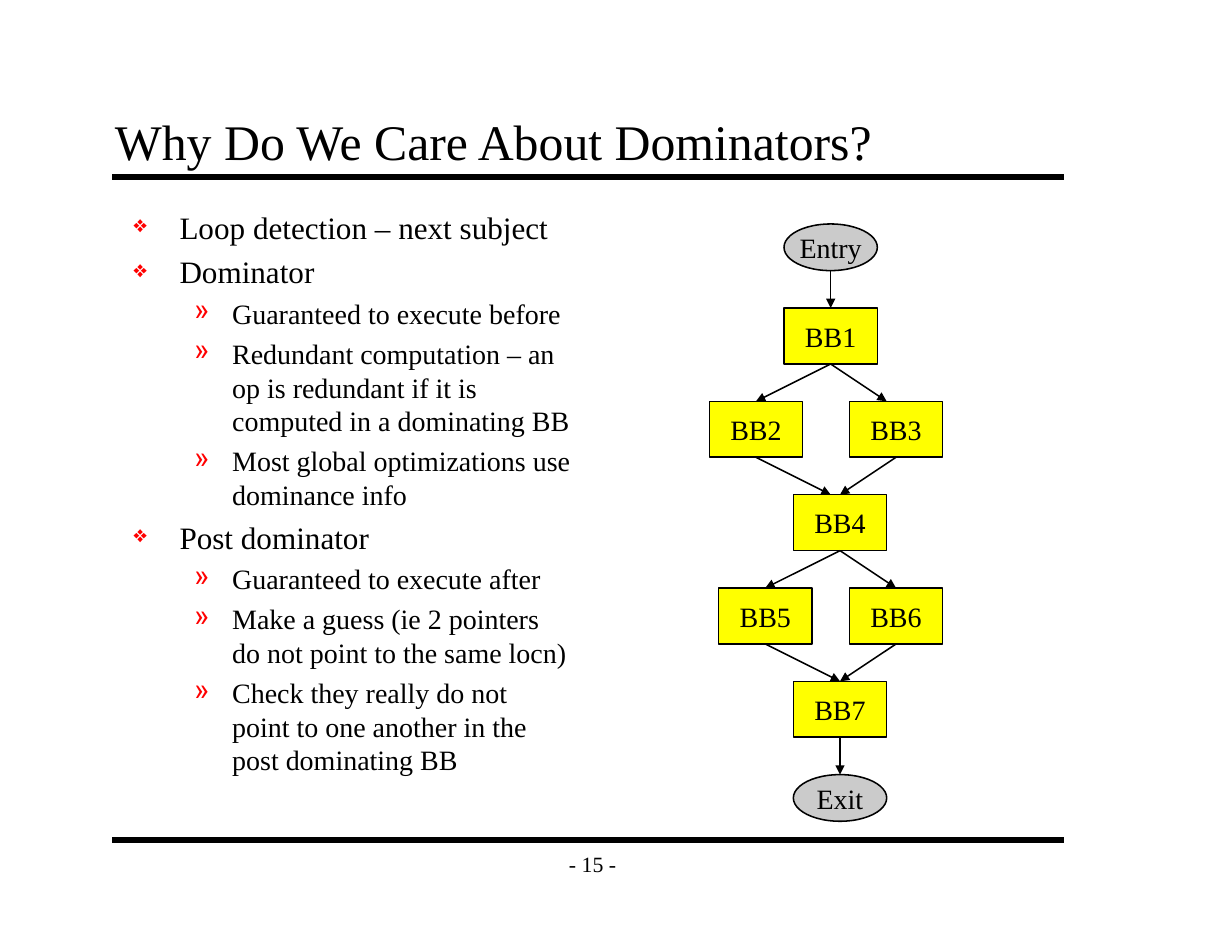
import pptx
import pptx.util
import pptx.dml.color
import pptx.enum.shapes
import pptx.enum.text
import pptx.oxml.ns
from lxml import etree

COLORS = {"ink": "000000", "block": "FFFF00", "terminal": "CBCBCB", "bullet": "FF0000"}
ANCHOR = pptx.enum.text.MSO_ANCHOR
ALIGN = pptx.enum.text.PP_ALIGN
SHAPE = pptx.enum.shapes.MSO_SHAPE
COLUMNS, ROWS = 132, 102

POINTS = [
    (0, "Loop detection – next subject"),
    (0, "Dominator"),
    (1, "Guaranteed to execute before"),
    (1, "Redundant computation – an op is redundant if it is computed in a dominating BB"),
    (1, "Most global optimizations use dominance info"),
    (0, "Post dominator"),
    (1, "Guaranteed to execute after"),
    (1, "Make a guess (ie 2 pointers do not point to the same locn)"),
    (1, "Check they really do not point to one another in the post dominating BB"),
]
LEVELS = [
    {"size": 20, "left": 0.41, "hang": 0.41, "mark": "❖", "scale": 75},
    {"size": 18, "left": 0.88, "hang": 0.34, "mark": "»", "scale": 100},
]
NODES = {
    "Entry": (84, 24), "BB1": (84, 33), "BB2": (76, 43), "BB3": (91, 43),
    "BB4": (85, 53), "BB5": (77, 63), "BB6": (91, 63), "BB7": (85, 73), "Exit": (85, 83),
}
EDGES = [
    ("Entry", "BB1", 0), ("BB1", "BB2", 0), ("BB1", "BB3", -1),
    ("BB2", "BB4", -1), ("BB3", "BB4", 0), ("BB4", "BB5", 0), ("BB4", "BB6", 0),
    ("BB5", "BB7", 0), ("BB6", "BB7", 0), ("BB7", "Exit", 0),
]
NODE_WIDTH, BLOCK_HEIGHT, TERMINAL_HEIGHT = 10, 6, 5


class SlideBuilder:
    font = "Times New Roman"

    def __init__(self, deck):
        self.page = deck.slides.add_slide(deck.slide_layouts[6])
        self.column = deck.slide_width / COLUMNS
        self.row = deck.slide_height / ROWS

    def place(self, x, y):
        return round(x * self.column), round(y * self.row)

    def color(self, name):
        return pptx.dml.color.RGBColor.from_string(COLORS[name])

    def format_runs(self, para, size):
        for span in para.runs:
            span.font.name = self.font
            span.font.size = pptx.util.Pt(size)
            span.font.color.rgb = self.color("ink")

    def text(self, x, y, width, height, words, size, anchor, align=ALIGN.LEFT, wrap=True):
        box = self.page.shapes.add_textbox(*self.place(x, y), *self.place(width, height))
        frame = box.text_frame
        frame.word_wrap = wrap
        frame.vertical_anchor = anchor
        frame.margin_left = frame.margin_right = pptx.util.Inches(0.11)
        frame.margin_top = frame.margin_bottom = pptx.util.Inches(0.06)
        frame.text = words
        for para in frame.paragraphs:
            para.alignment = align
            self.format_runs(para, size)
        return frame

    def bullets(self, x, y, width, height, points):
        words = "\n".join(words for level, words in points)
        frame = self.text(x, y, width, height, words, LEVELS[0]["size"], ANCHOR.TOP)
        for para, (level, words) in zip(frame.paragraphs, points):
            style = LEVELS[level]
            para.level = level
            para.space_before = pptx.util.Pt(style["size"] * 0.23)
            self.format_runs(para, style["size"])
            self.bullet(para, style)

    def bullet(self, para, style):
        qn = pptx.oxml.ns.qn
        properties = para._p.get_or_add_pPr()
        properties.set("marL", str(pptx.util.Inches(style["left"])))
        properties.set("indent", str(-pptx.util.Inches(style["hang"])))
        color = etree.SubElement(properties, qn("a:buClr"))
        etree.SubElement(color, qn("a:srgbClr"), val=COLORS["bullet"])
        etree.SubElement(properties, qn("a:buSzPct"), val=str(style["scale"] * 1000))
        etree.SubElement(properties, qn("a:buChar"), char=style["mark"])

    def node(self, kind, x, y, height, words, fill):
        shape = self.page.shapes.add_shape(kind, *self.place(x, y), *self.place(NODE_WIDTH, height))
        shape.shadow.inherit = False
        shape.fill.solid()
        shape.fill.fore_color.rgb = self.color(fill)
        shape.line.color.rgb = self.color("ink")
        shape.line.width = pptx.util.Pt(1)
        frame = shape.text_frame
        frame.word_wrap = False
        frame.vertical_anchor = ANCHOR.MIDDLE
        frame.text = words
        para = frame.paragraphs[0]
        para.alignment = ALIGN.CENTER
        self.format_runs(para, 18)

    def line(self, start, end, weight, arrow=False):
        qn = pptx.oxml.ns.qn
        straight = pptx.enum.shapes.MSO_CONNECTOR.STRAIGHT
        line = self.page.shapes.add_connector(straight, *self.place(*start), *self.place(*end))
        line.line.color.rgb = self.color("ink")
        line.line.width = pptx.util.Pt(weight)
        if arrow:
            etree.SubElement(line.line._get_or_add_ln(), qn("a:tailEnd"), type="triangle")
        etree.SubElement(line._element.spPr, qn("a:effectLst"))


def node_height(name):
    return BLOCK_HEIGHT if name.startswith("BB") else TERMINAL_HEIGHT


def main():
    deck = pptx.Presentation()
    deck.slide_width = pptx.util.Inches(11)
    deck.slide_height = pptx.util.Inches(8.5)
    slide = SlideBuilder(deck)

    for rule_row in (19, 90):
        slide.line((12, rule_row), (114, rule_row), 4)
    slide.text(59, 90, 9, 5, "- 15 -", 14, ANCHOR.MIDDLE, ALIGN.CENTER, wrap=False)
    slide.text(11, 11, 102, 8, "Why Do We Care About Dominators?", 32, ANCHOR.BOTTOM)
    slide.bullets(13, 21.6, 49.5, 68.4, POINTS)

    for name, (x, y) in NODES.items():
        if name.startswith("BB"):
            slide.node(SHAPE.RECTANGLE, x, y, node_height(name), name, "block")
        else:
            slide.node(SHAPE.OVAL, x, y, node_height(name), name, "terminal")
    for source, target, shift in EDGES:
        source_x, source_y = NODES[source]
        target_x, target_y = NODES[target]
        start = source_x + NODE_WIDTH / 2, source_y + node_height(source)
        end = target_x + NODE_WIDTH / 2 + shift, target_y
        slide.line(start, end, 1, arrow=True)

    deck.save("out.pptx")


if __name__ == "__main__":
    main()
